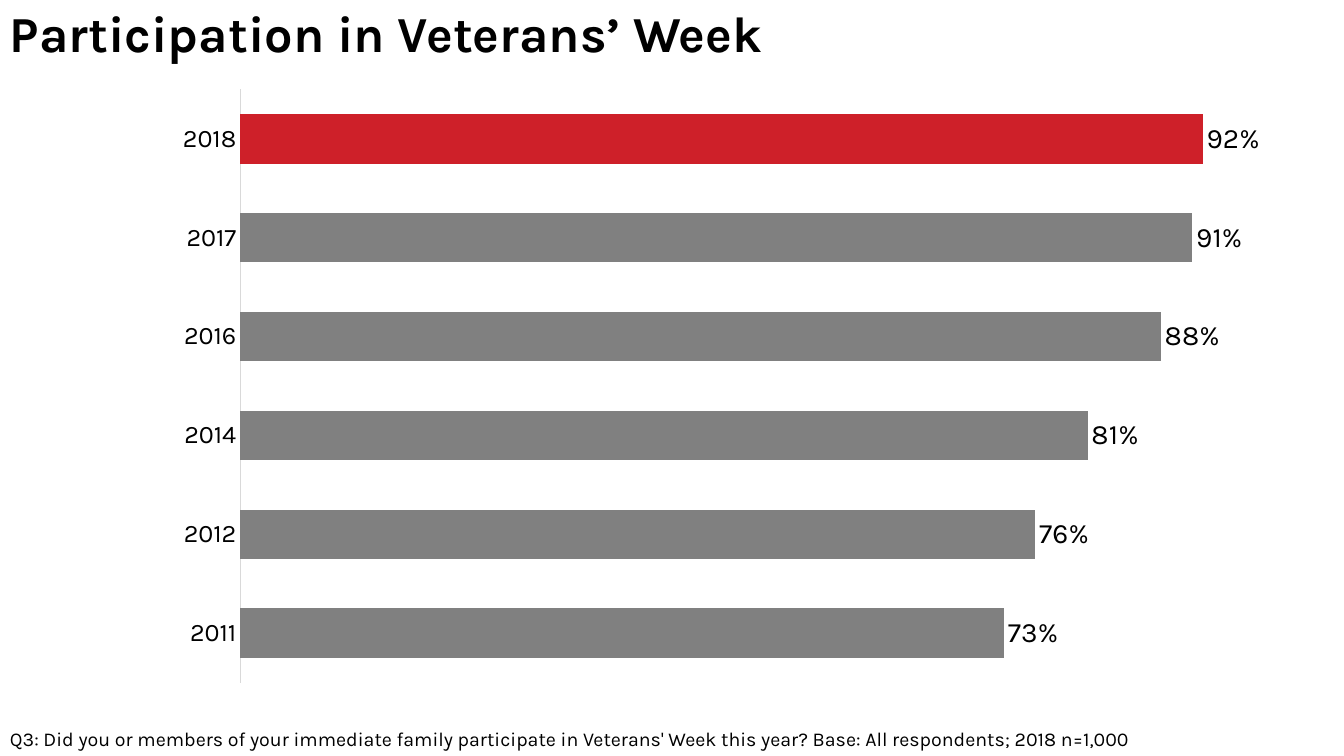
import pptx
import pptx.chart.data
import pptx.dml.color
import pptx.enum.chart
import pptx.enum.shapes
import pptx.enum.text
import pptx.oxml
import pptx.oxml.ns
import pptx.util
from pptx.util import Inches

FONT = "Karla"
BLACK, WHITE, GREY, RED, AXIS_GREY = "000000", "FFFFFF", "808080", "CE2029", "D9D9D9"
PARTICIPATION = {"2011": 0.73, "2012": 0.76, "2014": 0.81, "2016": 0.88, "2017": 0.91, "2018": 0.92}
HIGHLIGHT_YEAR = "2018"
SLIDE_WIDTH = Inches(13.33)


def rgb(hex_colour):
    """Return the colour for a hex string."""
    return pptx.dml.color.RGBColor.from_string(hex_colour)


def set_fill(part, hex_colour):
    """Fill a shape, series or point with a plain colour."""
    part.fill.solid()
    part.fill.fore_color.rgb = rgb(hex_colour)


def set_font(font, size, bold=False):
    """Apply the slide typeface in black at a size in points."""
    font.name = FONT
    font.size = pptx.util.Pt(size)
    font.bold = bold
    font.color.rgb = rgb(BLACK)


def write_line(frame, text, size, bold=False):
    """Write one left-aligned paragraph and return it."""
    frame.word_wrap = True
    paragraph = frame.paragraphs[0]
    paragraph.text = text
    paragraph.alignment = pptx.enum.text.PP_ALIGN.LEFT
    set_font(paragraph.font, size, bold)
    return paragraph


def add_title(slide, text):
    """Add the white title band across the top."""
    band = slide.shapes.add_shape(
        pptx.enum.shapes.MSO_SHAPE.RECTANGLE, Inches(0), Inches(0), SLIDE_WIDTH, Inches(0.71))
    band.shadow.inherit = False
    set_fill(band, WHITE)
    band.line.fill.background()
    band.text_frame.vertical_anchor = pptx.enum.text.MSO_ANCHOR.MIDDLE
    write_line(band.text_frame, text, 36, bold=True).line_spacing = 0.9


def add_footnote(slide, text):
    """Add the survey question along the bottom."""
    note = slide.shapes.add_textbox(Inches(0), Inches(7.16), SLIDE_WIDTH, Inches(0.34))
    note.text_frame.auto_size = pptx.enum.text.MSO_AUTO_SIZE.SHAPE_TO_FIT_TEXT
    write_line(note.text_frame, text, 14)


def set_plot_layout(chart, **fractions):
    """Place the inner plot area by fractions of the chart."""
    plot_area = chart._chartSpace.chart.plotArea
    for layout in plot_area.findall(pptx.oxml.ns.qn("c:layout")):
        plot_area.remove(layout)
    sizes = "".join(f'<c:{name} val="{value}"/>' for name, value in fractions.items())
    plot_area.insert(0, pptx.oxml.parse_xml(
        f'<c:layout {pptx.oxml.ns.nsdecls("c")}><c:manualLayout><c:layoutTarget val="inner"/>'
        f'<c:xMode val="edge"/><c:yMode val="edge"/>{sizes}</c:manualLayout></c:layout>'))


def style_axes(chart):
    """Show the years on a thin line and hide the percent scale."""
    years = chart.category_axis
    years.major_tick_mark = pptx.enum.chart.XL_TICK_MARK.NONE
    years.format.line.color.rgb = rgb(AXIS_GREY)
    years.format.line.width = pptx.util.Pt(0.75)
    set_font(years.tick_labels.font, 18)
    share = chart.value_axis
    share.minimum_scale, share.maximum_scale = 0, 1
    share.has_major_gridlines = False
    share.visible = False


def add_participation_chart(slide):
    """Add the bars by year with the latest year highlighted."""
    data = pptx.chart.data.CategoryChartData(number_format="0%")
    data.categories = list(PARTICIPATION)
    data.add_series("Series 1", list(PARTICIPATION.values()))
    chart = slide.shapes.add_chart(
        pptx.enum.chart.XL_CHART_TYPE.BAR_CLUSTERED,
        Inches(0.46), Inches(0.88), Inches(12.41), Inches(5.9), data).chart
    chart.has_legend = chart.has_title = False
    set_font(chart.font, 10)
    style_axes(chart)
    set_plot_layout(chart, x=0.155, y=0, w=0.836, h=1)

    plot = chart.plots[0]
    plot.gap_width = 99
    plot.vary_by_categories = False
    bars = plot.series[0]
    set_fill(bars.format, GREY)
    set_fill(bars.points[list(PARTICIPATION).index(HIGHLIGHT_YEAR)].format, RED)

    labels = bars.data_labels
    labels.show_value = True
    labels.position = pptx.enum.chart.XL_LABEL_POSITION.OUTSIDE_END
    labels.number_format = "0%"
    labels.number_format_is_linked = False
    set_font(labels.font, 20)


def main():
    """Build and save the slide."""
    deck = pptx.Presentation()
    deck.slide_width, deck.slide_height = SLIDE_WIDTH, Inches(7.5)
    slide = deck.slides.add_slide(deck.slide_layouts[6])
    add_participation_chart(slide)
    add_title(slide, "Participation in Veterans’ Week")
    add_footnote(slide, "Q3: Did you or members of your immediate family participate in Veterans' Week "
                        "this year? Base: All respondents; 2018 n=1,000")
    deck.save("out.pptx")


if __name__ == "__main__":
    main()
